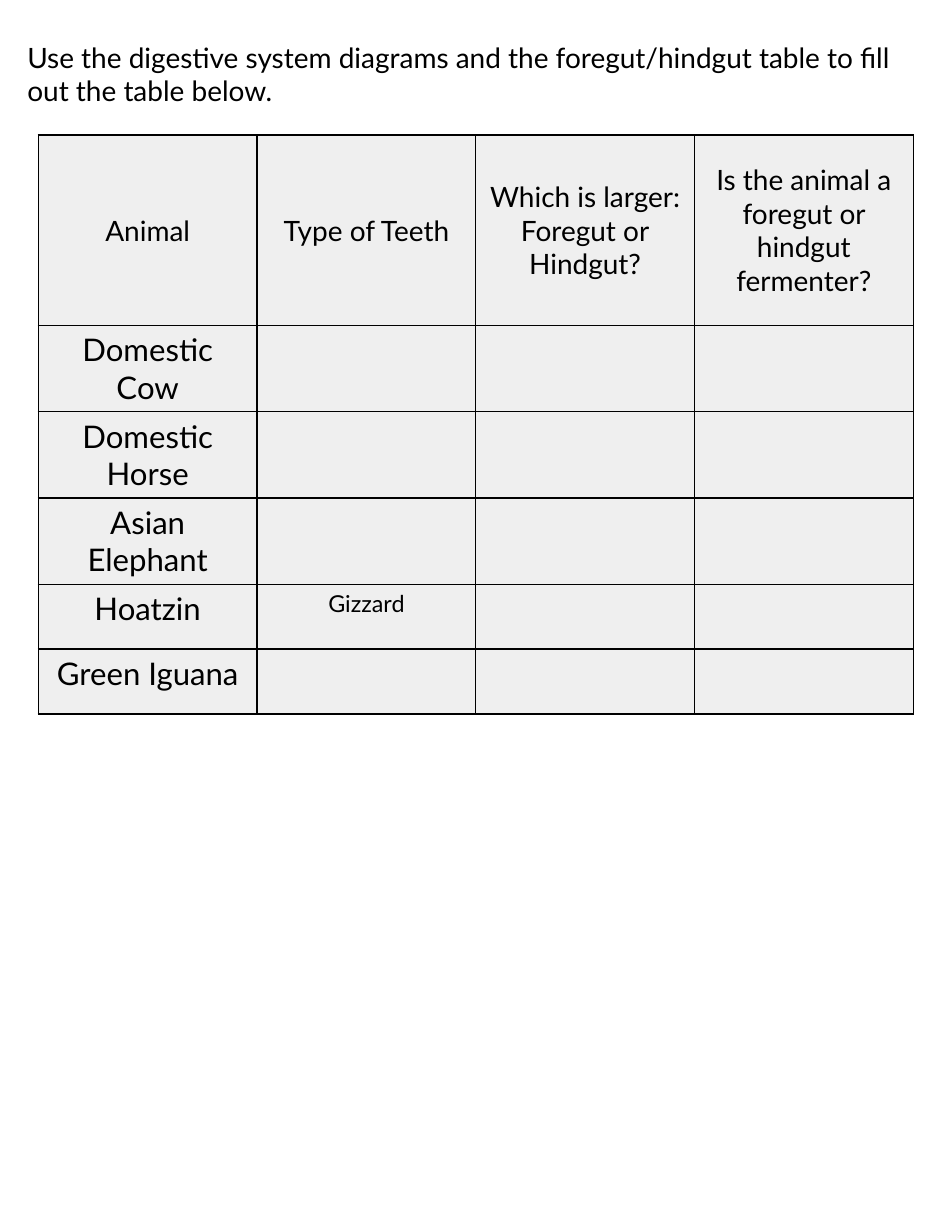
from lxml.etree import SubElement
from pptx import Presentation
from pptx.dml.color import RGBColor
from pptx.enum.text import MSO_VERTICAL_ANCHOR as Anchor, PP_PARAGRAPH_ALIGNMENT as Align
from pptx.oxml.ns import qn
from pptx.util import Cm, Pt

BLACK = RGBColor(0x00, 0x00, 0x00)
PALE_GREY = RGBColor(0xEF, 0xEF, 0xEF)

INSTRUCTION = ("Use the digestive system diagrams and the foregut/hindgut table "
               "to fill out the table below.")
HEADINGS = [
    ["Animal"],
    ["Type of Teeth"],
    ["Which is larger: Foregut or", "Hindgut?"],
    ["Is the animal a foregut or hindgut fermenter?"],
]
ANIMALS = ["Domestic Cow", "Domestic Horse", "Asian Elephant", "Hoatzin", "Green Iguana"]
KNOWN_TEETH = {"Hoatzin": "Gizzard"}


class Worksheet:
    """Holds the style and the current slide."""
    font = "Lato"
    body_size, animal_size, answer_size = 18, 20, 15
    column_width, header_height, row_height = Cm(4.96), Cm(4.32), Cm(1.47)

    def __init__(self, slide):
        self.slide = slide

    def add_lines(self, frame, lines, size, align=Align.LEFT):
        for index, line in enumerate(lines):
            para = frame.add_paragraph() if index else frame.paragraphs[0]
            para.alignment = align
            span = para.add_run()
            span.text = line
            span.font.name = self.font
            span.font.size = Pt(size)
            span.font.color.rgb = BLACK

    def text(self, left, top, width, height, lines):
        box = self.slide.shapes.add_textbox(left, top, width, height)
        box.text_frame.word_wrap = True
        self.add_lines(box.text_frame, lines, self.body_size)

    def border(self, cell):
        properties = cell._tc.get_or_add_tcPr()
        for position, side in enumerate(("lnL", "lnR", "lnT", "lnB")):
            line = properties.makeelement(qn(f"a:{side}"), {"w": str(Pt(1))})
            fill = SubElement(line, qn("a:solidFill"))
            SubElement(fill, qn("a:srgbClr"), val=str(BLACK))
            properties.insert(position, line)

    def table(self, left, top, headings, animals, answers):
        rows, columns = len(animals) + 1, len(headings)
        grid = self.slide.shapes.add_table(
            rows, columns, left, top, self.column_width * columns,
            self.header_height + self.row_height * len(animals)).table
        for column in grid.columns:
            column.width = self.column_width
        for index, row in enumerate(grid.rows):
            row.height = self.row_height if index else self.header_height
        for cell in grid.iter_cells():
            cell.fill.solid()
            cell.fill.fore_color.rgb = PALE_GREY
            self.border(cell)

        # Header row
        for index, lines in enumerate(headings):
            cell = grid.cell(0, index)
            cell.vertical_anchor = Anchor.MIDDLE
            self.add_lines(cell.text_frame, lines, self.body_size, Align.CENTER)

        # One row for each animal
        for index, animal in enumerate(animals, start=1):
            self.add_lines(grid.cell(index, 0).text_frame, [animal],
                           self.animal_size, Align.CENTER)
            if animal in answers:
                self.add_lines(grid.cell(index, 1).text_frame, [answers[animal]],
                               self.answer_size, Align.CENTER)


def main():
    deck = Presentation()
    deck.slide_width, deck.slide_height = Cm(21.59), Cm(27.94)
    page = Worksheet(deck.slides.add_slide(deck.slide_layouts[6]))

    # Answer table, then the instruction above it
    page.table(Cm(0.87), Cm(3.06), HEADINGS, ANIMALS, KNOWN_TEETH)
    page.text(Cm(0.37), Cm(0.79), Cm(20.85), Cm(1.8), [INSTRUCTION])

    deck.save("out.pptx")


if __name__ == "__main__":
    main()
